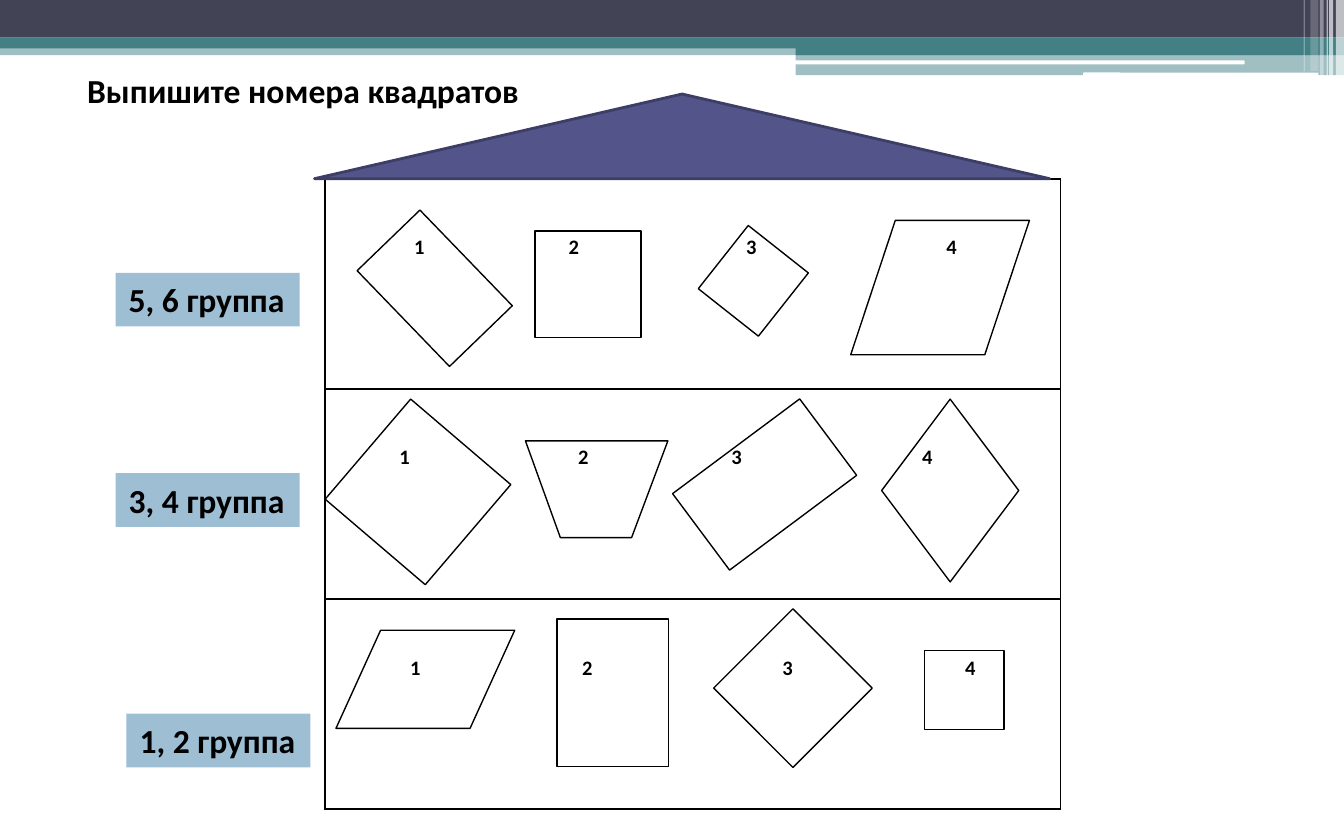
import pptx
import pptx.util
import pptx.dml.color
import pptx.enum.dml
import pptx.enum.shapes
import pptx.enum.text
import pptx.oxml
import pptx.oxml.ns

Inches = pptx.util.Inches
Pt = pptx.util.Pt
RGBColor = pptx.dml.color.RGBColor
Shape = pptx.enum.shapes.MSO_SHAPE

FONT = "Calibri"
BLACK = RGBColor(0x00, 0x00, 0x00)
WHITE = RGBColor(0xFF, 0xFF, 0xFF)
TEAL = RGBColor(0x43, 0x80, 0x86)
SLATE = RGBColor(0x42, 0x44, 0x56)
ROOF = RGBColor(0x53, 0x54, 0x8A)
ROOF_EDGE = RGBColor(0x3D, 0x3E, 0x66)
LABEL_BLUE = RGBColor(0x9D, 0xBE, 0xD3)

# left, top, width, height, colour, opacity in percent
HEADER_BARS = [
    (0, 0.33, 10, 0.08, TEAL, 50),
    (0, 0, 10, 0.28, SLATE, 100),
    (0, 0.28, 10, 0.08, TEAL, 100),
    (5.92, 0.33, 4.08, 0.08, TEAL, 100),
    (5.92, 0.4, 4.08, 0.16, TEAL, 50),
]
HEADER_SLITS = [(5.91, 0.45, 3.35, 0.03), (8.06, 0.54, 1.75, 0.03)]
# left, width, height, opacity in percent
CORNER_STRIPES = [
    (9.94, 0.06, 0.57, 65), (9.89, 0.03, 0.57, 65), (9.87, 0.01, 0.57, 60),
    (9.82, 0.03, 0.57, 40), (9.75, 0.06, 0.53, 20), (9.7, 0.01, 0.53, 30),
]
# kind, left, top, width, height, rotation, adjustment
FIGURES = [
    (Shape.PARALLELOGRAM, 2.5, 4.69, 1.33, 0.73, 0, 0.455),
    (Shape.RECTANGLE, 4.01, 4.74, 1.1, 0.83, 270, None),
    (Shape.RECTANGLE, 6.88, 4.84, 0.59, 0.59, 0, None),
    (Shape.DIAMOND, 5.31, 4.53, 1.18, 1.18, 0, None),
    (Shape.RECTANGLE, 5.32, 1.79, 0.57, 0.6, 38.3, None),
    (Shape.PARALLELOGRAM, 6.33, 1.64, 1.33, 1, 0, 0.332),
    (Shape.DIAMOND, 6.56, 2.97, 1.02, 1.36, 0, None),
    (Shape.RECTANGLE, 5.1, 3.25, 1.18, 0.71, 323.3, None),
    (Shape.RECTANGLE, 2.62, 3.17, 0.98, 0.98, 40.5, None),
    (Shape.RECTANGLE, 3.98, 1.72, 0.79, 0.79, 0, None),
    (Shape.RECTANGLE, 2.74, 1.82, 0.99, 0.65, 46, None),
]
TRAPEZOID = [(3.91, 3.28), (4.17, 4), (4.7, 4), (4.97, 3.28)]
# centres of the numbers on each floor, from the left of the cell text
NUMBER_STOPS = [
    (0.63, 1.78, 3.1, 4.59),
    (0.52, 1.85, 2.99, 4.41),
    (0.6, 1.88, 3.37, 4.73),
]
GROUP_LABELS = [
    ("1, 2 группа", 0.94, 5.31),
    ("3, 4 группа", 0.86, 3.52),
    ("5, 6 группа", 0.86, 2.03),
]


def paint(shape, fill, line=None, width=0.75):
    shape.shadow.inherit = False
    shape.fill.solid()
    shape.fill.fore_color.rgb = fill
    if line is None:
        shape.line.fill.background()
    else:
        shape.line.color.rgb = line
        shape.line.width = Pt(width)


def add_shape(page, kind, left, top, width, height, fill, line=None, line_width=0.75):
    shape = page.shapes.add_shape(
        kind, Inches(left), Inches(top), Inches(width), Inches(height))
    paint(shape, fill, line, line_width)
    return shape


def add_bar(page, left, top, width, height, fill, opacity):
    bar = add_shape(page, Shape.RECTANGLE, left, top, width, height, fill)
    if opacity < 100:
        color = bar.fill._xPr.find(".//" + pptx.oxml.ns.qn("a:srgbClr"))
        alpha = pptx.oxml.parse_xml(
            f'<a:alpha {pptx.oxml.ns.nsdecls("a")} val="{opacity * 1000}"/>')
        color.append(alpha)


def add_header(page):
    for bar in HEADER_BARS:
        add_bar(page, *bar)
    for slit in HEADER_SLITS:
        add_shape(page, Shape.ROUNDED_RECTANGLE, *slit, WHITE)
    for left, width, height, opacity in CORNER_STRIPES:
        add_bar(page, left, 0, width, height, WHITE, opacity)


def add_figure(page, kind, left, top, width, height, rotation, adjustment):
    figure = add_shape(page, kind, left, top, width, height, WHITE, BLACK)
    figure.rotation = rotation
    if adjustment is not None:
        figure.adjustments[0] = adjustment


def add_trapezoid(page):
    points = [(Inches(x), Inches(y)) for x, y in TRAPEZOID]
    builder = page.shapes.build_freeform(*points[0])
    builder.add_line_segments(points[1:], close=True)
    paint(builder.convert_to_shape(), WHITE, BLACK)


def add_span(para, text, size):
    span = para.add_run()
    span.text = text
    span.font.name = FONT
    span.font.size = Pt(size)
    span.font.bold = True
    span.font.color.rgb = BLACK


def add_borders(cell):
    properties = cell._tc.get_or_add_tcPr()
    for side in ("lnL", "lnR", "lnT", "lnB"):
        properties.append(pptx.oxml.parse_xml(
            f'<a:{side} {pptx.oxml.ns.nsdecls("a")} w="{Pt(1)}">'
            f'<a:solidFill><a:srgbClr val="{BLACK}"/></a:solidFill></a:{side}>'))


def add_tab_stops(para, stops):
    tabs = "".join(f'<a:tab pos="{Inches(stop)}" algn="ctr"/>' for stop in stops)
    para._p.get_or_add_pPr().append(pptx.oxml.parse_xml(
        f'<a:tabLst {pptx.oxml.ns.nsdecls("a")}>{tabs}</a:tabLst>'))


def add_floors(page):
    """One table row per floor, numbers centred on tab stops."""
    table = page.shapes.add_table(
        len(NUMBER_STOPS), 1, Inches(2.42), Inches(1.33), Inches(5.47), Inches(4.69)).table
    table.first_row = False
    table.horz_banding = False
    for row, stops in enumerate(NUMBER_STOPS):
        cell = table.cell(row, 0)
        add_borders(cell)
        cell.fill.background()
        cell.margin_left = cell.margin_right = Inches(0.07)
        cell.margin_top = Inches(0.42)
        cell.margin_bottom = 0
        para = cell.text_frame.paragraphs[0]
        add_tab_stops(para, stops)
        add_span(para, "".join(f"\t{number}" for number in range(1, len(stops) + 1)), 11)


def add_caption(box, text):
    frame = box.text_frame
    frame.word_wrap = False
    frame.auto_size = pptx.enum.text.MSO_AUTO_SIZE.SHAPE_TO_FIT_TEXT
    frame.vertical_anchor = pptx.enum.text.MSO_ANCHOR.TOP
    para = frame.paragraphs[0]
    para.alignment = pptx.enum.text.PP_ALIGN.LEFT
    add_span(para, text, 18)


def main():
    deck = pptx.Presentation()
    deck.slide_width = Inches(10)
    deck.slide_height = Inches(6.25)
    page = deck.slides.add_slide(deck.slide_layouts[6])
    add_header(page)
    for figure in FIGURES:
        add_figure(page, *figure)
    add_trapezoid(page)
    add_floors(page)
    add_shape(page, Shape.ISOSCELES_TRIANGLE, 2.34, 0.7, 5.47, 0.63, ROOF, ROOF_EDGE, 1.5)
    title = page.shapes.add_textbox(Inches(0.55), Inches(0.47), Inches(3.45), Inches(0.4))
    add_caption(title, "Выпишите номера квадратов")
    for text, left, top in GROUP_LABELS:
        label = add_shape(page, Shape.RECTANGLE, left, top, 1.37, 0.4, LABEL_BLUE)
        add_caption(label, text)
    deck.save("out.pptx")


if __name__ == "__main__":
    main()
